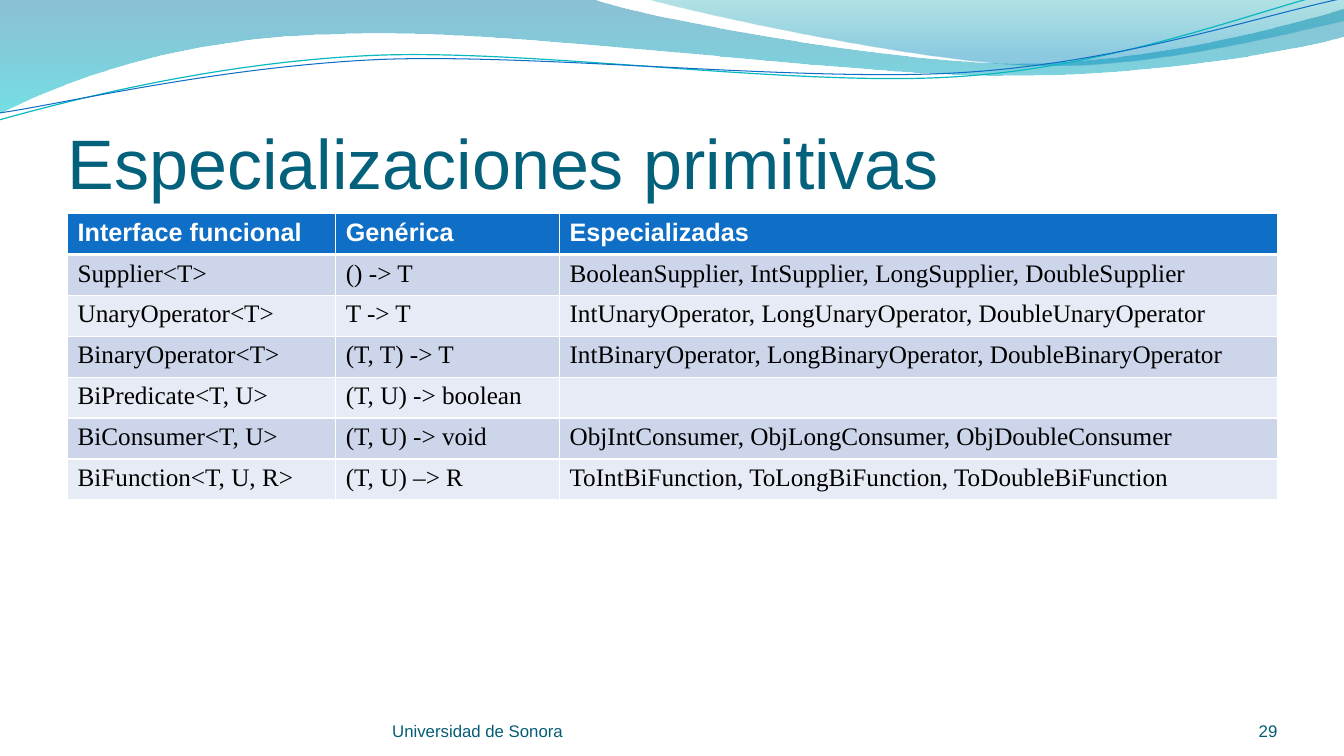
from dataclasses import dataclass

from lxml import etree
from pptx import Presentation
from pptx.dml.color import RGBColor
from pptx.enum.text import MSO_ANCHOR, MSO_AUTO_SIZE, PP_ALIGN
from pptx.oxml.ns import qn
from pptx.util import Inches, Pt

BOTTOM = MSO_ANCHOR.BOTTOM
NO_AUTOFIT = MSO_AUTO_SIZE.NONE
LEFT, RIGHT = PP_ALIGN.LEFT, PP_ALIGN.RIGHT
TITLE_ONLY_LAYOUT = 5

Point = tuple[float, float]
Segment = tuple[Point, ...]


@dataclass(frozen=True)
class TextStyle:
    size: float
    font: str
    color: str
    bold: bool = False


@dataclass(frozen=True)
class Theme:
    title: TextStyle = TextStyle(50, "Arial", "04617B")
    header: TextStyle = TextStyle(18, "Arial", "FFFFFF", True)
    body: TextStyle = TextStyle(18, "Times New Roman", "000000")
    footer: TextStyle = TextStyle(12, "Arial", "045D75")
    header_fill: str = "0F6FC6"
    band_fills: tuple[str, str] = ("CCD5EA", "E7EBF5")
    border: str = "FFFFFF"
    teal: str = "0AB8BF"
    blue: str = "0F6FC6"


@dataclass(frozen=True)
class GradientStop:
    position: float
    color: str
    opacity: int


@dataclass(frozen=True)
class Wave:
    start: Point
    segments: tuple[Segment, ...]
    stops: tuple[GradientStop, ...] = ()
    line_color: str = ""
    line_width: float = 0


@dataclass(frozen=True)
class Footer:
    text: str
    left: float
    width: float
    alignment: PP_ALIGN


THEME = Theme()

WAVES = (
    Wave((0, 0), (
        ((5.87, -0.01),),
        ((6.34, 0.17), (8.85, 0.63), (10.11, 0.63)),
        ((11.38, 0.63), (12.78, 0.26), (13.33, 0.09)),
        ((13.35, 0.36),),
        ((13.11, 0.44), (11.6, 0.76), (9.94, 0.75)),
        ((8.29, 0.75), (5.09, 0.28), (3.43, 0.34)),
        ((1.72, 0.36), (0.61, 0.83), (-0.01, 1.13)),
        ((0, 0),),
    ), stops=(GradientStop(0, "0074A1", 45), GradientStop(1, "00C6CF", 55))),
    Wave((6.39, -0.01), (
        ((6.79, 0.11), (9.09, 0.62), (10.25, 0.65)),
        ((11.41, 0.69), (12.82, 0.32), (13.33, 0.21)),
        ((13.33, 0),),
        ((6.39, -0.01),),
    ), stops=(GradientStop(0, "00A1A9", 30), GradientStop(0.8, "008BBF", 45))),
    Wave((-0.01, 1.19), (
        ((0.64, 1.01), (2.11, 0.62), (3.69, 0.55)),
        ((5.27, 0.48), (7.9, 0.87), (9.5, 0.76)),
        ((11.1, 0.66), (12.52, 0.08), (13.31, -0.1)),
    ), line_color=THEME.teal, line_width=0.85),
    Wave((0, 1.12), (
        ((0.63, 1.03), (2.18, 0.66), (3.78, 0.59)),
        ((5.37, 0.53), (7.96, 0.82), (9.55, 0.72)),
        ((11.15, 0.62), (12.55, 0.14), (13.34, -0.02)),
    ), line_color=THEME.blue, line_width=0.75),
)

COLUMN_WIDTHS = (2.66, 2.22, 7.12)
TABLE_HEIGHT = 2.84
ROWS = (
    ("Interface funcional", "Genérica", "Especializadas"),
    ("Supplier<T>", "() -> T", "BooleanSupplier, IntSupplier, LongSupplier, DoubleSupplier"),
    ("UnaryOperator<T>", "T -> T", "IntUnaryOperator, LongUnaryOperator, DoubleUnaryOperator"),
    ("BinaryOperator<T>", "(T, T) -> T",
     "IntBinaryOperator, LongBinaryOperator, DoubleBinaryOperator"),
    ("BiPredicate<T, U>", "(T, U) -> boolean", ""),
    ("BiConsumer<T, U>", "(T, U) -> void", "ObjIntConsumer, ObjLongConsumer, ObjDoubleConsumer"),
    ("BiFunction<T, U, R>", "(T, U) –> R",
     "ToIntBiFunction, ToLongBiFunction, ToDoubleBiFunction"),
)

FOOTERS = (
    Footer("Universidad de Sonora", 3.89, 4.89, LEFT),
    Footer("29", 11.56, 1.11, RIGHT),
)


def add_text(paragraph, text: str, style: TextStyle) -> None:
    run = paragraph.add_run()
    run.text = text
    run.font.size = Pt(style.size)
    run.font.name = style.font
    run.font.bold = style.bold
    run.font.color.rgb = RGBColor.from_string(style.color)


def set_frame(frame, top_inset: float) -> None:
    frame.word_wrap = True
    frame.auto_size = NO_AUTOFIT
    frame.vertical_anchor = BOTTOM
    frame.margin_left = frame.margin_right = frame.margin_bottom = 0
    frame.margin_top = Inches(top_inset)


def bend_segments(shape, segments: tuple[Segment, ...]) -> None:
    lines = iter(list(shape._element.iter(qn("a:lnTo"))))
    for segment in segments:
        first, *others = [next(lines) for _ in segment]
        if others:
            curve = etree.Element(qn("a:cubicBezTo"))
            first.addprevious(curve)
            for line in (first, *others):
                curve.append(line[0])
                line.getparent().remove(line)


def add_wave(slide, wave: Wave) -> None:
    points = [wave.start, *(point for segment in wave.segments for point in segment)]
    vertices = [(Inches(x), Inches(y)) for x, y in points]
    builder = slide.shapes.build_freeform(*vertices[0])
    builder.add_line_segments(vertices[1:], close=bool(wave.stops))
    shape = builder.convert_to_shape()
    bend_segments(shape, wave.segments)
    shape.shadow.inherit = False
    if not wave.stops:
        shape.fill.background()
        shape.line.color.rgb = RGBColor.from_string(wave.line_color)
        shape.line.width = Pt(wave.line_width)
        return
    shape.line.fill.background()
    shape.fill.gradient()
    shape.fill.gradient_angle = 270
    for stop, wanted in zip(shape.fill.gradient_stops, wave.stops):
        stop.position = wanted.position
        stop.color.rgb = RGBColor.from_string(wanted.color)
    for color, wanted in zip(shape._element.iter(qn("a:srgbClr")), wave.stops):
        etree.SubElement(color, qn("a:alpha"), val=str(wanted.opacity * 1000))


def set_borders(cell, top: float, bottom: float) -> None:
    properties = cell._tc.get_or_add_tcPr()
    for side, width in (("L", 1), ("R", 1), ("T", top), ("B", bottom)):
        line = etree.SubElement(properties, qn(f"a:ln{side}"), w=str(Pt(width)))
        fill = etree.SubElement(line, qn("a:solidFill"))
        etree.SubElement(fill, qn("a:srgbClr"), val=THEME.border)


def add_interface_table(slide) -> None:
    table = slide.shapes.add_table(
        len(ROWS), len(COLUMN_WIDTHS), Inches(0.67), Inches(2.12),
        Inches(sum(COLUMN_WIDTHS)), Inches(TABLE_HEIGHT)).table
    for column, width in zip(table.columns, COLUMN_WIDTHS):
        column.width = Inches(width)
    for index, texts in enumerate(ROWS):
        style = THEME.body if index else THEME.header
        color = THEME.band_fills[(index - 1) % 2] if index else THEME.header_fill
        for cell, text in zip(table.rows[index].cells, texts):
            set_borders(cell, 3 if index == 1 else 1, 1 if index else 3)
            cell.fill.solid()
            cell.fill.fore_color.rgb = RGBColor.from_string(color)
            if text:
                add_text(cell.text_frame.paragraphs[0], text, style)


def add_title(slide, text: str) -> None:
    title = slide.shapes.title
    title.left, title.top = Inches(0.67), Inches(0.77)
    title.width, title.height = Inches(12), Inches(1.25)
    set_frame(title.text_frame, 0.05)
    paragraph = title.text_frame.paragraphs[0]
    paragraph.alignment = LEFT
    add_text(paragraph, text, THEME.title)


def add_footer(slide, footer: Footer) -> None:
    box = slide.shapes.add_textbox(
        Inches(footer.left), Inches(6.95), Inches(footer.width), Inches(0.4))
    set_frame(box.text_frame, 0)
    paragraph = box.text_frame.paragraphs[0]
    paragraph.alignment = footer.alignment
    add_text(paragraph, footer.text, THEME.footer)


def main() -> None:
    presentation = Presentation()
    presentation.slide_width, presentation.slide_height = Inches(13.33), Inches(7.5)
    slide = presentation.slides.add_slide(presentation.slide_layouts[TITLE_ONLY_LAYOUT])
    for wave in WAVES:
        add_wave(slide, wave)
    add_title(slide, "Especializaciones primitivas")
    add_interface_table(slide)
    for footer in FOOTERS:
        add_footer(slide, footer)
    presentation.save("out.pptx")


if __name__ == "__main__":
    main()
